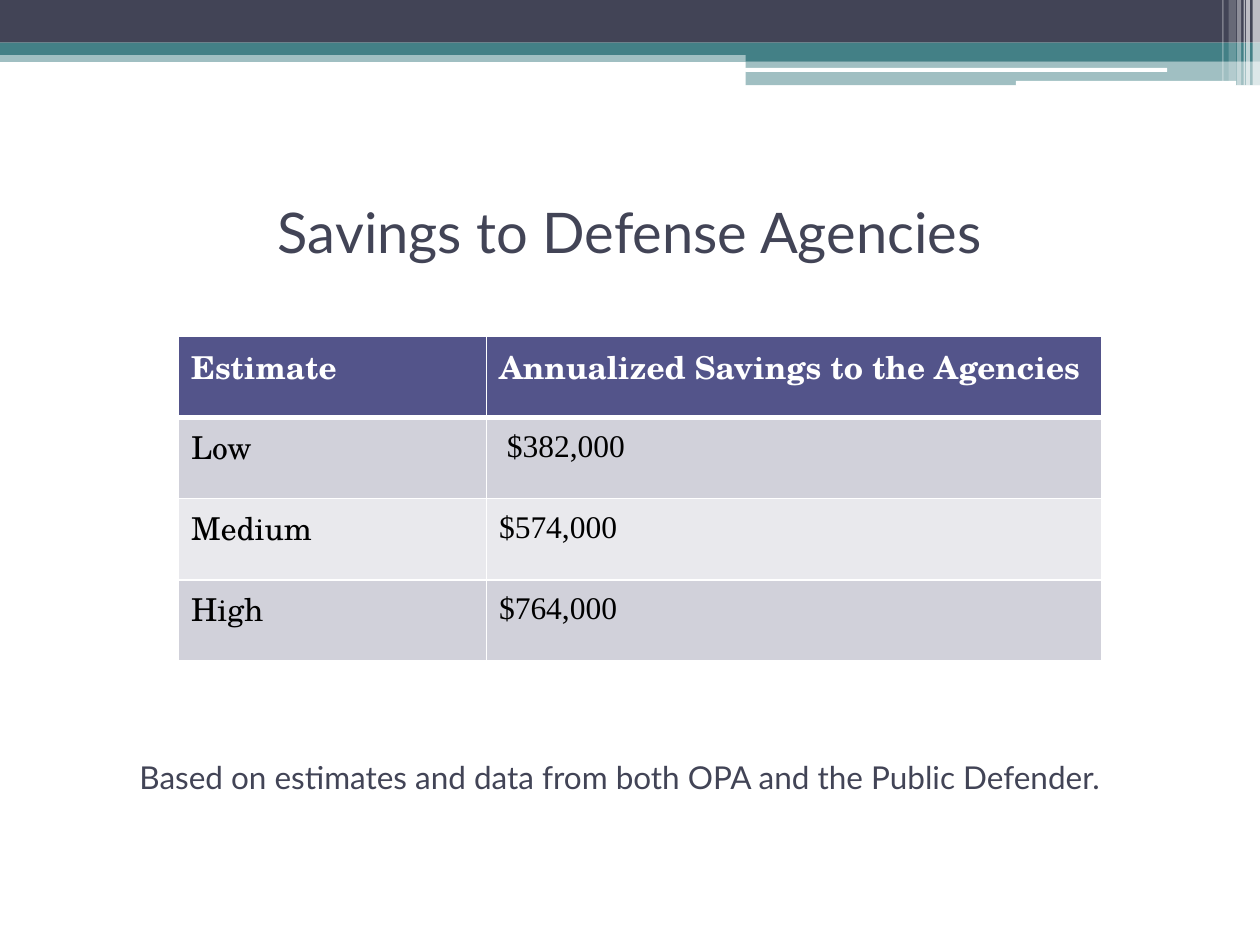
from pptx import Presentation
from pptx.dml.color import RGBColor
from pptx.enum.shapes import MSO_SHAPE
from pptx.enum.text import MSO_ANCHOR, PP_ALIGN
from pptx.oxml.ns import qn
from pptx.util import Cm, Pt
from lxml.etree import SubElement

SLATE = RGBColor(0x42, 0x44, 0x56)
TEAL = RGBColor(0x43, 0x80, 0x86)
INDIGO = RGBColor(0x53, 0x54, 0x8A)
DARK_BAND = RGBColor(0xD1, 0xD1, 0xDA)
LIGHT_BAND = RGBColor(0xE9, 0xE9, 0xED)
WHITE = RGBColor(0xFF, 0xFF, 0xFF)
BLACK = RGBColor(0, 0, 0)

HEADING_FONT = "Lato"
BODY_FONT = "TeX Gyre Schola"
AMOUNT_FONT = "Times New Roman"

RECTANGLE = MSO_SHAPE.RECTANGLE
ROUNDED = MSO_SHAPE.ROUNDED_RECTANGLE

BANNER_BARS = [
    (RECTANGLE, 0, 1.02, 25.4, 0.23, TEAL, 50),
    (RECTANGLE, 0, 0, 25.4, 0.86, SLATE, 100),
    (RECTANGLE, 0, 0.86, 25.4, 0.25, TEAL, 100),
    (RECTANGLE, 15.03, 0.99, 10.37, 0.25, TEAL, 100),
    (RECTANGLE, 15.03, 1.24, 10.37, 0.48, TEAL, 50),
    (ROUNDED, 15.02, 1.37, 8.51, 0.08, WHITE, 100),
    (ROUNDED, 20.48, 1.63, 4.44, 0.1, WHITE, 100),
]
BANNER_STRIPES = [
    (25.25, 0.15, 1.73, 65),
    (25.12, 0.08, 1.73, 65),
    (25.07, 0.03, 1.73, 60),
    (24.94, 0.08, 1.73, 40),
    (24.77, 0.15, 1.63, 20),
    (24.64, 0.03, 1.63, 30),
]
SAVINGS = [
    ("Estimate", "Annualized Savings to the Agencies"),
    ("Low", " $382,000"),
    ("Medium", "$574,000"),
    ("High", "$764,000"),
]


def add_bar(slide, kind, left, top, width, height, color, opacity):
    shape = slide.shapes.add_shape(kind, Cm(left), Cm(top), Cm(width), Cm(height))
    shape.shadow.inherit = False
    shape.fill.solid()
    shape.fill.fore_color.rgb = color
    shape.line.fill.background()
    if opacity < 100:
        fill_color = shape._element.spPr.find(qn("a:solidFill")).find(qn("a:srgbClr"))
        SubElement(fill_color, qn("a:alpha"), val=str(opacity * 1000))


def add_banner(slide, left, top):
    stripes = [
        (RECTANGLE, x, 0, width, height, WHITE, opacity)
        for x, width, height, opacity in BANNER_STRIPES
    ]
    for kind, x, y, width, height, color, opacity in BANNER_BARS + stripes:
        add_bar(slide, kind, left + x, top + y, width, height, color, opacity)


def add_centered_text(slide, left, top, width, height, text, size):
    box = slide.shapes.add_textbox(Cm(left), Cm(top), Cm(width), Cm(height))
    frame = box.text_frame
    frame.word_wrap = True
    frame.vertical_anchor = MSO_ANCHOR.MIDDLE
    paragraph = frame.paragraphs[0]
    paragraph.text = text
    paragraph.alignment = PP_ALIGN.CENTER
    paragraph.font.size = Pt(size)
    paragraph.font.name = HEADING_FONT
    paragraph.font.color.rgb = SLATE


def set_borders(cell, top, bottom):
    properties = cell._tc.get_or_add_tcPr()
    for side, width in (("L", 1), ("R", 1), ("T", top), ("B", bottom)):
        line = SubElement(properties, qn(f"a:ln{side}"), w=str(Pt(width)))
        fill = SubElement(line, qn("a:solidFill"))
        SubElement(fill, qn("a:srgbClr"), val=str(WHITE))


def format_amount(paragraph):
    paragraph.font.name = AMOUNT_FONT
    paragraph.line_spacing = 1.15
    properties = paragraph._p.get_or_add_pPr()
    properties.set("marL", str(Cm(0.97)))
    properties.set("indent", str(Cm(-0.97)))


def add_savings_table(slide, left, top, width, height):
    frame = slide.shapes.add_table(
        len(SAVINGS), 2, Cm(left), Cm(top), Cm(width), Cm(height)
    )
    table = frame.table
    table.columns[0].width = Cm(width / 3)
    table.columns[1].width = Cm(width * 2 / 3)
    for row_index, texts in enumerate(SAVINGS):
        header = row_index == 0
        band = DARK_BAND if row_index % 2 else LIGHT_BAND
        for column_index, text in enumerate(texts):
            cell = table.cell(row_index, column_index)
            set_borders(cell, 3 if row_index == 1 else 1, 3 if header else 1)
            cell.fill.solid()
            cell.fill.fore_color.rgb = INDIGO if header else band
            paragraph = cell.text_frame.paragraphs[0]
            paragraph.text = text
            paragraph.font.size = Pt(18)
            paragraph.font.name = BODY_FONT
            paragraph.font.bold = header
            paragraph.font.color.rgb = WHITE if header else BLACK
            if column_index == 1 and not header:
                format_amount(paragraph)
    paragraph.space_after = Pt(10)


def main():
    presentation = Presentation()
    presentation.slide_width = Cm(25.4)
    presentation.slide_height = Cm(19.05)
    slide = presentation.slides.add_slide(presentation.slide_layouts[6])
    add_banner(slide, 0, 0)
    add_centered_text(slide, 1.27, 3.18, 22.86, 2.97, "Savings to Defense Agencies", 32)
    add_savings_table(slide, 3.6, 6.78, 18.62, 6.55)
    add_centered_text(
        slide, 1.07, 14.17, 22.86, 2.97,
        "Based on estimates and data from both OPA and the Public Defender.", 18,
    )
    presentation.save("out.pptx")


if __name__ == "__main__":
    main()
